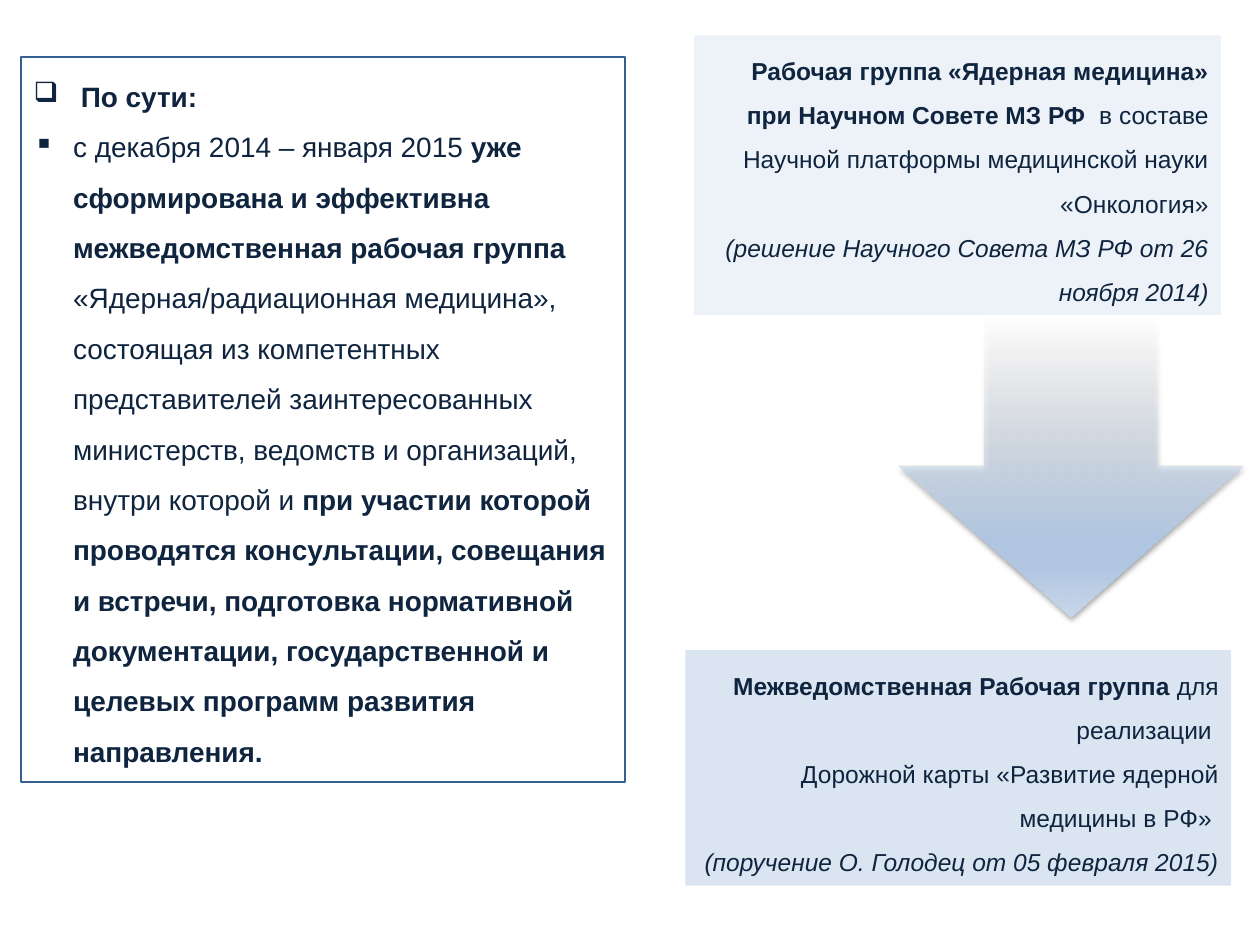
"""Build the slide on the interdepartmental working group for nuclear medicine."""
from dataclasses import dataclass

from lxml import etree
from pptx import Presentation
from pptx.dml.color import RGBColor
from pptx.enum import shapes, text
from pptx.oxml import ns
from pptx.util import Pt

INK = "0F243E"
ACCENT = "4F81BD"


@dataclass
class Span:
    text: str
    bold: bool = False


@dataclass
class Para:
    spans: list[Span]
    bullet: str = ""
    italic: bool = False


@dataclass
class Panel:
    left: float
    top: float
    width: float
    height: float
    size: float
    align: text.PP_ALIGN
    paras: list[Para]
    opacity: int = 0
    outline: str = ""


PANELS = [
    Panel(12.2, 32.4, 345, 414.7, 16, text.PP_ALIGN.LEFT, [
        Para([Span(" По сути:", True)], "❑"),
        Para([
            Span("с декабря 2014 – января 2015 "),
            Span("уже сформирована и эффективна межведомственная рабочая группа", True),
            Span(" «Ядерная/радиационная медицина», состоящая из компетентных представителей "
                 "заинтересованных министерств, ведомств и организаций, внутри которой и "),
            Span("при участии которой проводятся консультации, совещания и встречи, "
                 "подготовка нормативной документации, государственной и целевых программ "
                 "развития направления.", True),
        ], "▪"),
    ], outline="376092"),
    Panel(396.7, 20.2, 301, 159.8, 14, text.PP_ALIGN.RIGHT, [
        Para([
            Span("Рабочая группа «Ядерная медицина» при Научном Совете МЗ РФ  ", True),
            Span("в составе Научной платформы медицинской науки «Онкология»"),
        ]),
        Para([Span("(решение Научного Совета МЗ РФ от 26 ноября 2014)")], italic=True),
    ], opacity=10),
    Panel(391.7, 371.5, 311.8, 134.6, 14, text.PP_ALIGN.RIGHT, [
        Para([Span("Межведомственная Рабочая группа", True), Span(" для реализации ")]),
        Para([Span("Дорожной карты «Развитие ядерной медицины в РФ» ")]),
        Para([Span("(поручение О. Голодец от 05 февраля 2015)")], italic=True),
    ], opacity=20),
]
ARROW_STOPS = [(0, "FFFFFF", 1), (74, "B0C6E1", 100), (83, "B0C6E1", 100), (100, "CAD9EB", 100)]


def color(value: str) -> RGBColor:
    return RGBColor.from_string(value)


def add_node(parent, tag: str, **attributes):
    values = {name: str(value) for name, value in attributes.items()}
    return etree.SubElement(parent, ns.qn(tag), values)


def add_color(parent, value: str, opacity: int) -> None:
    node = add_node(parent, "a:srgbClr", val=value)
    if opacity < 100:
        add_node(node, "a:alpha", val=opacity * 1000)


def add_para(para, content: Para, panel: Panel) -> None:
    para.alignment = panel.align
    para.line_spacing = 1.5
    para.font.name = "Arial"
    para.font.size = Pt(panel.size)
    para.font.color.rgb = color(INK)
    para.font.italic = content.italic
    if content.bullet:
        properties = para._p.get_or_add_pPr()
        properties.set("marL", str(Pt(22.5)))
        properties.set("indent", str(-Pt(22.5)))
        bullet = etree.Element(ns.qn("a:buChar"), char=content.bullet)
        properties.insert_element_before(bullet, "a:tabLst", "a:defRPr", "a:extLst")
    for item in content.spans:
        span = para.add_run()
        span.text = item.text
        span.font.bold = item.bold


def add_panel(page, panel: Panel) -> None:
    box = page.shapes.add_shape(shapes.MSO_SHAPE.RECTANGLE, Pt(panel.left), Pt(panel.top),
                                Pt(panel.width), Pt(panel.height))
    box.shadow.inherit = False
    if panel.opacity:
        box.fill.solid()
        box.fill.fore_color.rgb = color(ACCENT)
        tint = box._element.spPr.find(ns.qn("a:solidFill"))[0]
        add_node(tint, "a:alpha", val=panel.opacity * 1000)
    else:
        box.fill.background()
    if panel.outline:
        box.line.color.rgb = color(panel.outline)
        box.line.width = Pt(1)
    else:
        box.line.fill.background()
    frame = box.text_frame
    frame.word_wrap = True
    frame.auto_size = text.MSO_AUTO_SIZE.SHAPE_TO_FIT_TEXT
    frame.vertical_anchor = text.MSO_ANCHOR.TOP
    for index, content in enumerate(panel.paras):
        para = frame.add_paragraph() if index else frame.paragraphs[0]
        add_para(para, content, panel)


def add_arrow(page) -> None:
    arrow = page.shapes.add_shape(shapes.MSO_SHAPE.DOWN_ARROW, Pt(513.4), Pt(180),
                                  Pt(197.3), Pt(172.8))
    arrow.line.fill.background()
    arrow.fill.gradient()
    arrow.fill.gradient_angle = 270
    properties = arrow._element.spPr
    stops = properties.find(ns.qn("a:gradFill")).find(ns.qn("a:gsLst"))
    for stop in list(stops):
        stops.remove(stop)
    for position, value, opacity in ARROW_STOPS:
        add_color(add_node(stops, "a:gs", pos=position * 1000), value, opacity)
    arrow.shadow.inherit = False
    effects = properties.find(ns.qn("a:effectLst"))
    shadow = add_node(effects, "a:outerShdw", blurRad=Pt(3.1), dist=Pt(1.8),
                      dir=90 * 60000, rotWithShape=0)
    add_color(shadow, "000000", 35)


def main() -> None:
    deck = Presentation()
    deck.slide_width, deck.slide_height = Pt(720), Pt(540)
    page = deck.slides.add_slide(deck.slide_layouts[6])
    add_arrow(page)
    for panel in PANELS:
        add_panel(page, panel)
    deck.save("out.pptx")


if __name__ == "__main__":
    main()
